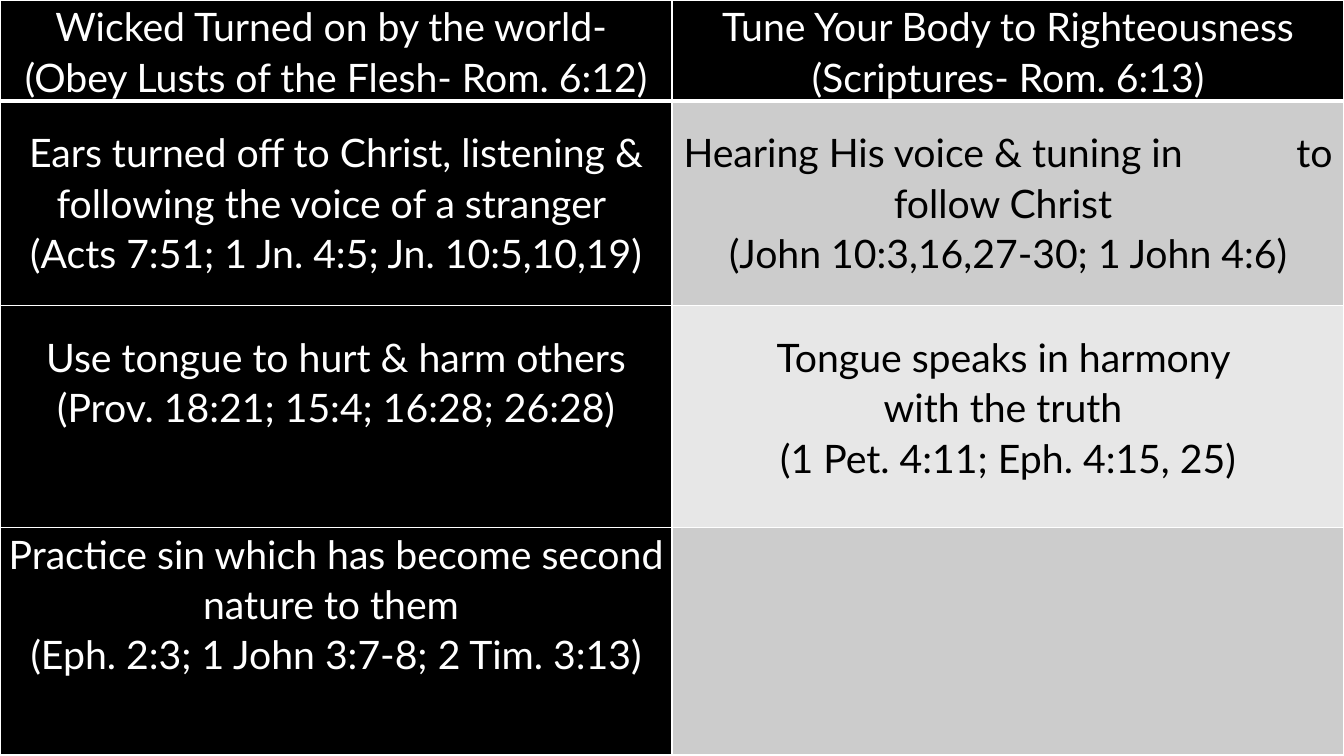
from dataclasses import dataclass

from lxml.etree import SubElement
from pptx import Presentation
from pptx.dml.color import RGBColor as RGB
from pptx.enum.text import MSO_ANCHOR as Anchor, PP_ALIGN as Align
from pptx.oxml.ns import qn
from pptx.util import Inches, Pt

HEADINGS = (
    ["Wicked Turned on by the world- ", "(Obey Lusts of the Flesh- Rom. 6:12)"],
    ["Tune Your Body to Righteousness (Scriptures- Rom. 6:13)"],
)
CONTRASTS = [
    (
        ["Ears turned off to Christ, listening & following the voice of a stranger ",
         "(Acts 7:51; 1 Jn. 4:5; Jn. 10:5,10,19)"],
        [("Hearing His voice & tuning in", " ", "to follow Christ "),
         "(John 10:3,16,27-30; 1 John 4:6)"],
    ),
    (
        ["Use tongue to hurt & harm others", "(Prov. 18:21; 15:4; 16:28; 26:28)"],
        ["Tongue speaks in harmony ", "with the truth ", "(1 Pet. 4:11; Eph. 4:15, 25)"],
    ),
    (
        ["Practice sin which has become second nature to them ",
         "(Eph. 2:3; 1 John 3:7-8; 2 Tim. 3:13)"],
        [],
    ),
]
ROW_HEIGHTS = [0.99, 2.03, 2.2, 2.26]
TOP_GAPS = [0, 0.25, 0.25, 0]
SLIDE_WIDTH, SLIDE_HEIGHT = 13.33, 7.5


@dataclass(frozen=True)
class Theme:
    font: str = "Lato"
    size: int = 28
    line_spacing: float = 1.07
    wide_space: int = 74
    dark: str = "000000"
    light: str = "FFFFFF"
    bands: tuple = ("CCCCCC", "E7E7E7")
    rule: float = 1
    heading_rule: float = 3
    side_margin: float = 0.07


THEME = Theme()


def draw_borders(cell, row):
    properties = cell._tc.get_or_add_tcPr()
    widths = {
        "a:lnL": THEME.rule,
        "a:lnR": THEME.rule,
        "a:lnT": THEME.heading_rule if row == 1 else THEME.rule,
        "a:lnB": THEME.heading_rule if row == 0 else THEME.rule,
    }
    for side, width in widths.items():
        border = SubElement(properties, qn(side), w=str(Pt(width)))
        SubElement(SubElement(border, qn("a:solidFill")), qn("a:srgbClr"), val=THEME.light)


def write_verses(cell, verses, color):
    frame = cell.text_frame
    frame.word_wrap = True
    for index, verse in enumerate(verses or [""]):
        paragraph = frame.paragraphs[0] if index == 0 else frame.add_paragraph()
        paragraph.alignment = Align.CENTER
        paragraph.line_spacing = THEME.line_spacing
        paragraph.font.name = THEME.font
        paragraph.font.size = Pt(THEME.size)
        paragraph.font.bold = False
        paragraph.font.color.rgb = RGB.from_string(color)
        for part in (verse,) if isinstance(verse, str) else verse:
            if part:
                run = paragraph.add_run()
                run.text = part
                if part == " ":
                    run.font._element.set("spc", str(THEME.wide_space * 100))


def fill_cell(cell, row, column, verses):
    on_band = row > 0 and column == 1
    fill = THEME.bands[(row - 1) % 2] if on_band else THEME.dark
    draw_borders(cell, row)
    cell.fill.solid()
    cell.fill.fore_color.rgb = RGB.from_string(fill)
    cell.margin_left = cell.margin_right = Inches(THEME.side_margin)
    cell.margin_top = Inches(TOP_GAPS[row])
    cell.margin_bottom = 0
    cell.vertical_anchor = Anchor.TOP
    write_verses(cell, verses, THEME.dark if on_band else THEME.light)


def main():
    deck = Presentation()
    deck.slide_width, deck.slide_height = Inches(SLIDE_WIDTH), Inches(SLIDE_HEIGHT)
    slide = deck.slides.add_slide(deck.slide_layouts[6])
    slide.background.fill.solid()
    slide.background.fill.fore_color.rgb = RGB.from_string(THEME.dark)

    comparison = [HEADINGS, *CONTRASTS]
    table = slide.shapes.add_table(
        len(comparison), len(HEADINGS), 0, 0,
        Inches(SLIDE_WIDTH), Inches(sum(ROW_HEIGHTS)),
    ).table
    table.horz_banding = False
    for row, (height, sides) in enumerate(zip(ROW_HEIGHTS, comparison)):
        table.rows[row].height = Inches(height)
        for column, verses in enumerate(sides):
            fill_cell(table.cell(row, column), row, column, verses)

    deck.save("out.pptx")


if __name__ == "__main__":
    main()
